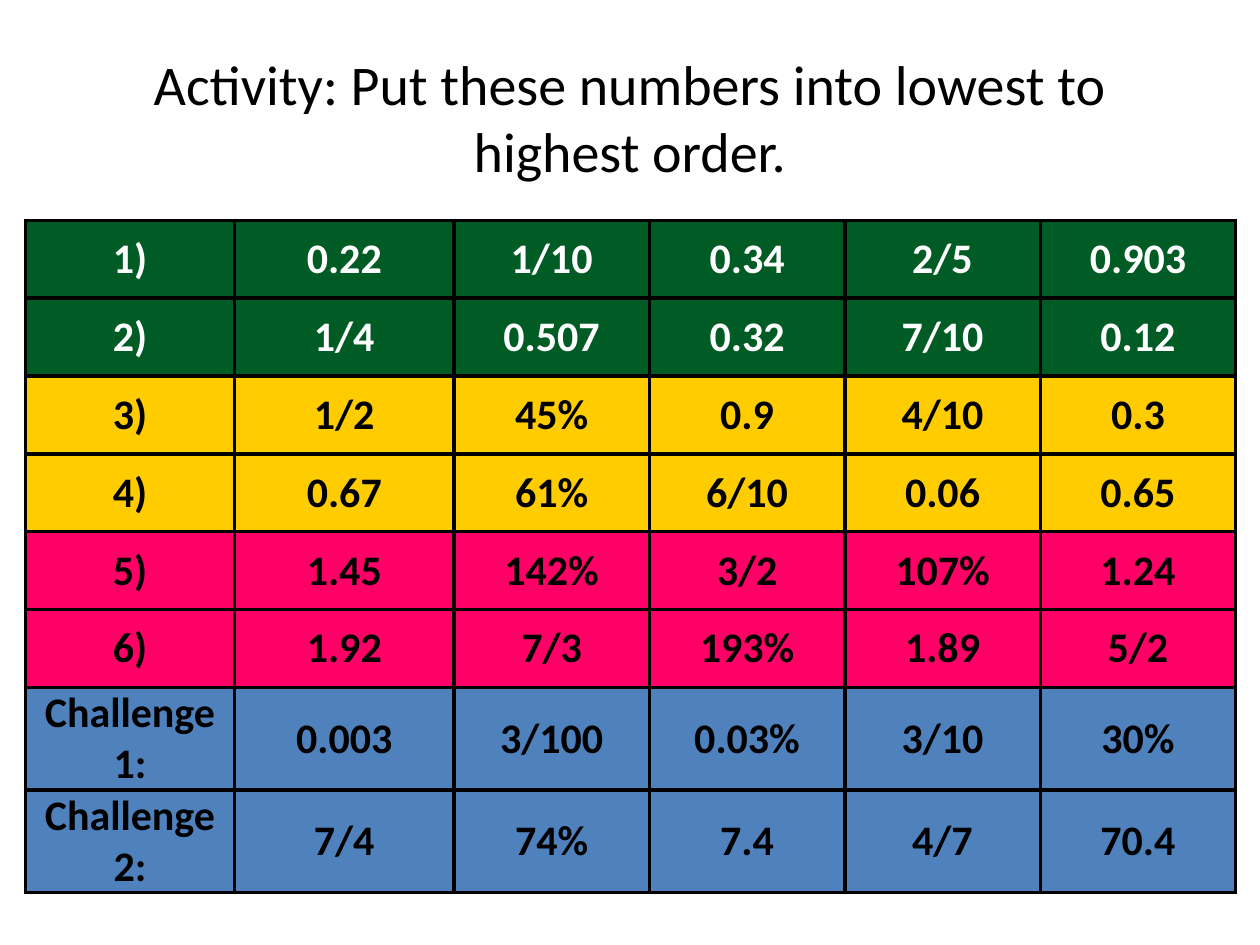
from dataclasses import dataclass

from lxml.etree import SubElement
from pptx import Presentation
from pptx.dml.color import RGBColor
from pptx.enum.text import MSO_ANCHOR as Anchor, PP_ALIGN as Align
from pptx.oxml.ns import qn
from pptx.util import Cm, Pt

FONT = "Calibri"
BLACK, WHITE = "000000", "FFFFFF"
GREEN, YELLOW, PINK, BLUE = "005C24", "FFCC00", "FF0066", "4F81BD"
BORDER_WIDTH = Pt(2.25)
COLUMN_WIDTHS = [4.22, 4.42] + [3.94] * 4
ROW_HEIGHT, CHALLENGE_HEIGHT = 1.57, 2.03


@dataclass
class Question:
    label: str
    numbers: list[str]
    fill: str
    text_color: str = BLACK
    height: float = ROW_HEIGHT


QUESTIONS = [
    Question("1)", ["0.22", "1/10", "0.34", "2/5", "0.903"], GREEN, WHITE),
    Question("2)", ["1/4", "0.507", "0.32", "7/10", "0.12"], GREEN, WHITE),
    Question("3)", ["1/2", "45%", "0.9", "4/10", "0.3"], YELLOW),
    Question("4)", ["0.67", "61%", "6/10", "0.06", "0.65"], YELLOW),
    Question("5)", ["1.45", "142%", "3/2", "107%", "1.24"], PINK),
    Question("6)", ["1.92", "7/3", "193%", "1.89", "5/2"], PINK),
    Question("Challenge 1:", ["0.003", "3/100", "0.03%", "3/10", "30%"],
             BLUE, height=CHALLENGE_HEIGHT),
    Question("Challenge 2:", ["7/4", "74%", "7.4", "4/7", "70.4"],
             BLUE, height=CHALLENGE_HEIGHT),
]


def rgb(color: str) -> RGBColor:
    return RGBColor.from_string(color)


def write_text(text_frame, text: str, size: float, color: str, bold: bool) -> None:
    """Write one centred paragraph and format its run."""
    text_frame.text = text
    text_frame.word_wrap = True
    paragraph = text_frame.paragraphs[0]
    paragraph.alignment = Align.CENTER
    font = paragraph.runs[0].font
    font.name, font.size, font.bold = FONT, Pt(size), bold
    font.color.rgb = rgb(color)


def add_borders(cell, color: str) -> None:
    """Put the four side lines before the fill, as the schema requires."""
    properties = cell._tc.get_or_add_tcPr()
    for position, side in enumerate(("lnL", "lnR", "lnT", "lnB")):
        line = SubElement(properties, qn(f"a:{side}"), w=str(BORDER_WIDTH))
        properties.insert(position, line)
        solid = SubElement(line, qn("a:solidFill"))
        SubElement(solid, qn("a:srgbClr"), val=color)


def format_cell(cell, text: str, question: Question) -> None:
    write_text(cell.text_frame, text, 24, question.text_color, True)
    cell.vertical_anchor = Anchor.MIDDLE
    cell.margin_left = cell.margin_right = cell.margin_top = cell.margin_bottom = 0
    cell.fill.solid()
    cell.fill.fore_color.rgb = rgb(question.fill)
    add_borders(cell, BLACK)


def add_question_table(slide, questions: list[Question]) -> None:
    width = sum(COLUMN_WIDTHS)
    height = sum(question.height for question in questions)
    table = slide.shapes.add_table(
        len(questions), len(COLUMN_WIDTHS),
        Cm(0.51), Cm(4.44), Cm(width), Cm(height)).table
    table.first_row = table.horz_banding = False
    for column, column_width in zip(table.columns, COLUMN_WIDTHS):
        column.width = Cm(column_width)
    for row, question in zip(table.rows, questions):
        row.height = Cm(question.height)
        for cell, text in zip(row.cells, [question.label, *question.numbers]):
            format_cell(cell, text, question)


def main() -> None:
    presentation = Presentation()
    presentation.slide_width, presentation.slide_height = Cm(25.4), Cm(19.05)
    slide = presentation.slides.add_slide(presentation.slide_layouts[5])

    # Title
    title = slide.shapes.title
    title.left, title.top, title.width, title.height = (
        Cm(1.27), Cm(0.76), Cm(22.86), Cm(3.18))
    write_text(title.text_frame,
               "Activity: Put these numbers into lowest to highest order.",
               32, BLACK, False)
    title.text_frame.vertical_anchor = Anchor.MIDDLE

    # Numbers to put in order
    add_question_table(slide, QUESTIONS)

    presentation.save("out.pptx")


if __name__ == "__main__":
    main()
